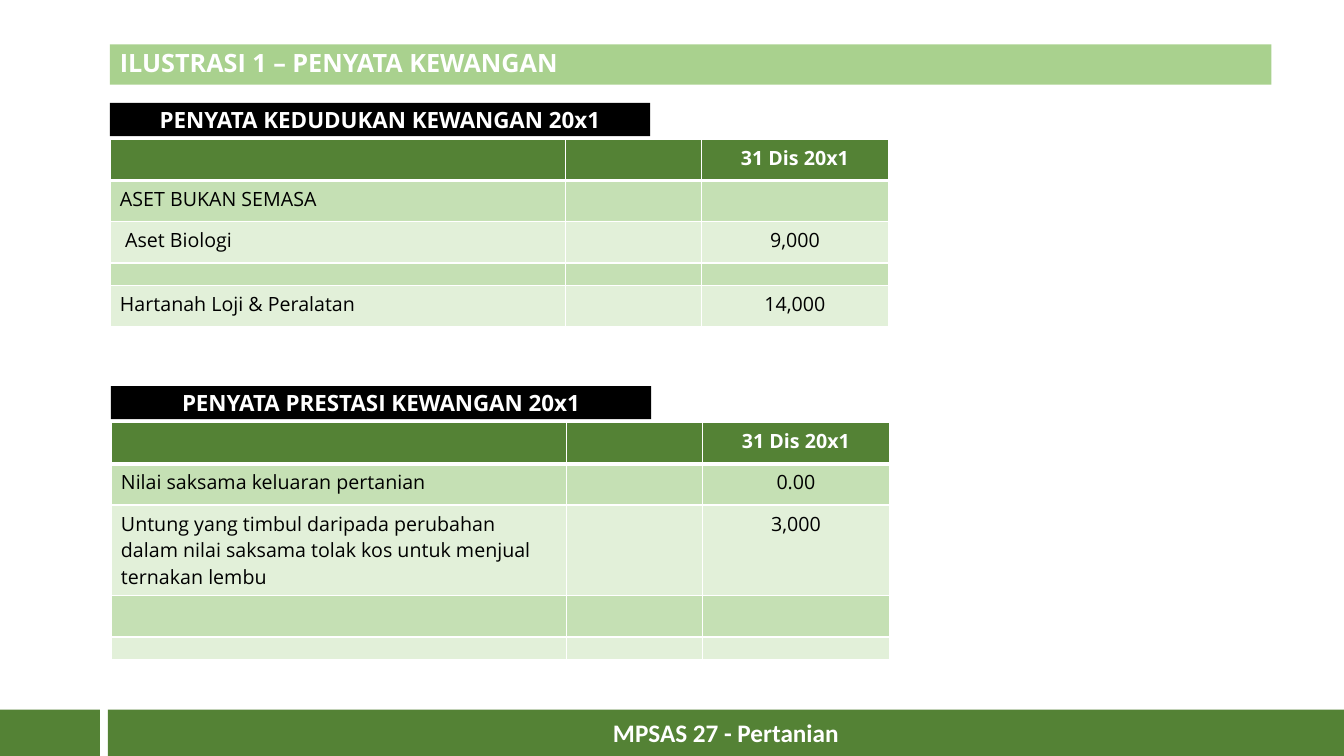
from lxml import etree
from pptx import Presentation, util as u
from pptx.dml.color import RGBColor
from pptx.enum import shapes, text as t
from pptx.oxml import ns

COLORS = {"white": "FFFFFF", "black": "000000", "green": "548235",
          "title": "A9D18E", "band": "C5E0B4", "light": "E2F0D9"}
ALIGN = t.PP_ALIGN

# The slide is a grid of 1333 columns by 750 rows.
UNIT = u.Inches(0.01)
COLUMNS, ROWS = 1333, 750
LEFT = 109
FOOTER_TOP, FOOTER_HEIGHT, FOOTER_SPLIT, FOOTER_GAP = 704, 46, 99, 8
HEADING_WIDTH, HEADING_HEIGHT, TABLE_OFFSET = 536, 33, 36
TABLE_COLUMNS = [452, 135, 185]
ROW, THIN_ROW, TALL_ROW = 41, 22, 90


def write(frame, text, size=14, color="black", bold=False, align=ALIGN.LEFT,
          font="Open Sans", spacing=1.0):
    """Fill a text frame with one formatted paragraph; empty text only sets the line size."""
    para = frame.paragraphs[0]
    para.alignment = align
    para.line_spacing = spacing
    if not text:
        etree.SubElement(para._p, ns.qn("a:endParaRPr"), sz=str(size * 100))
        return
    span = para.add_run()
    span.text = text
    span.font.size = u.Pt(size)
    span.font.name = font
    span.font.bold = bold
    span.font.color.rgb = RGBColor.from_string(COLORS[color])


def add_bar(left, top, width, height, fill, text="", **style):
    box = page.shapes.add_shape(shapes.MSO_SHAPE.RECTANGLE, left * UNIT, top * UNIT,
                                width * UNIT, height * UNIT)
    box.shadow.inherit = False
    box.fill.solid()
    box.fill.fore_color.rgb = RGBColor.from_string(COLORS[fill])
    box.line.fill.background()
    box.text_frame.word_wrap = True
    box.text_frame.vertical_anchor = t.MSO_ANCHOR.MIDDLE
    write(box.text_frame, text, color="white", bold=True, **style)


deck = Presentation()
deck.slide_width, deck.slide_height = COLUMNS * UNIT, ROWS * UNIT
page = deck.slides.add_slide(deck.slide_layouts[6])

add_bar(LEFT, 44, 1152, 40, "title", "ILUSTRASI 1 – PENYATA KEWANGAN", size=18, spacing=0.9)
add_bar(0, FOOTER_TOP, FOOTER_SPLIT, FOOTER_HEIGHT, "green")
footer_left = FOOTER_SPLIT + FOOTER_GAP
add_bar(footer_left, FOOTER_TOP, COLUMNS - footer_left, FOOTER_HEIGHT, "green",
        "MPSAS 27 - Pertanian", size=18, font="Calibri", align=ALIGN.CENTER)

# Each statement: left, top, heading, rows of (height, label, amount)
statements = [
    (LEFT, 102, "PENYATA KEDUDUKAN KEWANGAN 20x1", [
        (ROW, "", "31 Dis 20x1"),
        (ROW, "ASET BUKAN SEMASA", ""),
        (ROW, " Aset Biologi", "9,000"),
        (THIN_ROW, "", ""),
        (ROW, "Hartanah Loji & Peralatan", "14,000")]),
    (LEFT + 1, 383, "PENYATA PRESTASI KEWANGAN 20x1", [
        (ROW, "", "31 Dis 20x1"),
        (ROW, "Nilai saksama keluaran pertanian", "0.00"),
        (TALL_ROW, "Untung yang timbul daripada perubahan dalam nilai saksama "
                   "tolak kos untuk menjual ternakan lembu", "3,000"),
        (ROW, "", ""),
        (THIN_ROW, "", "")]),
]

for left, top, heading, lines in statements:
    add_bar(left, top, HEADING_WIDTH, HEADING_HEIGHT, "black", heading,
            size=16, align=ALIGN.CENTER)
    table = page.shapes.add_table(
        len(lines), len(TABLE_COLUMNS), left * UNIT, (top + TABLE_OFFSET) * UNIT,
        sum(TABLE_COLUMNS) * UNIT, sum(line[0] for line in lines) * UNIT).table
    table.horz_banding = False
    for column, width in zip(table.columns, TABLE_COLUMNS):
        column.width = width * UNIT

    for row, (height, label, amount) in enumerate(lines):
        table.rows[row].height = height * UNIT
        header = row == 0
        fill = "green" if header else "band" if row % 2 else "light"
        for column, content in enumerate([label, "", amount]):
            cell = table.cell(row, column)
            write(cell.text_frame, content, size=5 if height == THIN_ROW else 14,
                  color="white" if header else "black", bold=header,
                  align=ALIGN.CENTER if column == 2 else ALIGN.LEFT)
            borders = cell._tc.get_or_add_tcPr()
            for side in "LRTB":
                thick = (row, side) in [(0, "B"), (1, "T")]
                edge = etree.SubElement(borders, ns.qn(f"a:ln{side}"),
                                        w=str(u.Pt(3 if thick else 1)))
                paint = etree.SubElement(edge, ns.qn("a:solidFill"))
                etree.SubElement(paint, ns.qn("a:srgbClr"), val=COLORS["white"])
            cell.fill.solid()
            cell.fill.fore_color.rgb = RGBColor.from_string(COLORS[fill])

deck.save("out.pptx")
